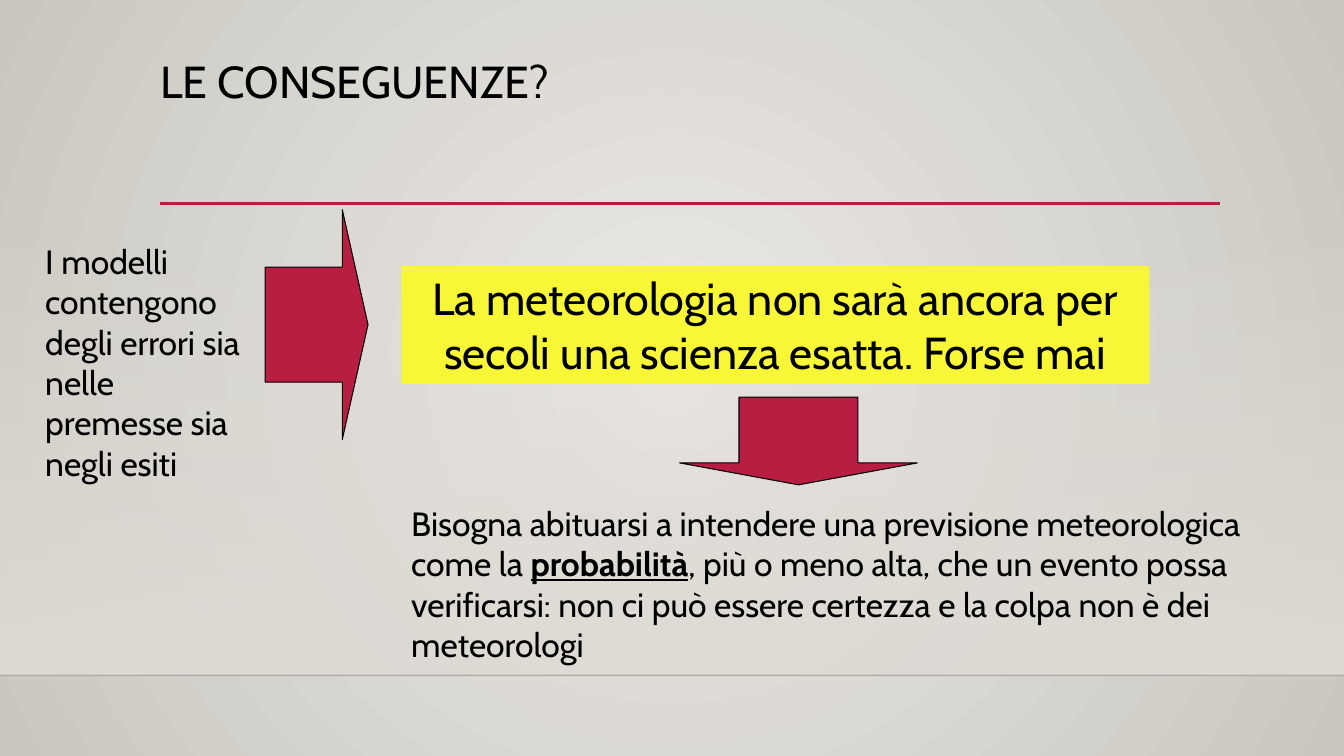
import pptx
import pptx.util
import pptx.dml.color
import pptx.enum.shapes
import pptx.enum.text
import pptx.oxml.ns
import lxml.etree

Inches = pptx.util.Inches
Pt = pptx.util.Pt
RGBColor = pptx.dml.color.RGBColor
Shape = pptx.enum.shapes.MSO_SHAPE
Align = pptx.enum.text.PP_ALIGN
qn = pptx.oxml.ns.qn

BLACK = RGBColor(0, 0, 0)
RED = RGBColor(0xB7, 0x1E, 0x42)
YELLOW = RGBColor(0xF7, 0xF7, 0x37)
SAND = RGBColor(0xDF, 0xDB, 0xD5)
LIGHT = RGBColor(0xEC, 0xEA, 0xE7)
DARK = RGBColor(0xCA, 0xC7, 0xC1)


def write(shape, *parts, size=24, align=Align.LEFT, spacing=None):
    frame = shape.text_frame
    frame.word_wrap = True
    frame.auto_size = pptx.enum.text.MSO_AUTO_SIZE.NONE
    frame.vertical_anchor = pptx.enum.text.MSO_ANCHOR.TOP
    para = frame.paragraphs[0]
    para.alignment = align
    para.line_spacing = spacing
    for num, text in enumerate(parts):
        run = para.add_run()
        run.text = text
        run.font.name = "Cabin"
        run.font.size = Pt(size)
        run.font.color.rgb = BLACK
        if num % 2:
            run.font.bold = True
            run.font.underline = True


def fade(shape, percent):
    color = next(shape.element.iter(qn("a:srgbClr")))
    lxml.etree.SubElement(color, qn("a:alpha"), val=str(percent * 1000))


deck = pptx.Presentation()
deck.slide_width = Inches(13.33)
deck.slide_height = Inches(7.5)
slide = deck.slides.add_slide(deck.slide_layouts[5])
shapes = slide.shapes

back = slide.background.fill
back.gradient()
for stop, color in zip(back.gradient_stops, (LIGHT, DARK)):
    stop.color.rgb = color
grad = next(slide.element.iter(qn("a:gradFill")))
grad.remove(grad.find(qn("a:lin")))
ring = lxml.etree.SubElement(grad, qn("a:path"), path="circle")
lxml.etree.SubElement(ring, qn("a:fillToRect"), l="50000", t="50000", r="50000", b="50000")

wall = shapes.add_shape(Shape.RECTANGLE, 0, Inches(2.21), Inches(13.33), Inches(4.49))
wall.shadow.inherit = False
wall.line.fill.background()
wall.fill.gradient()
wall.fill.gradient_angle = 270
for stop in wall.fill.gradient_stops:
    stop.color.rgb = SAND
fade(wall, 0)

for left, right, top, color, width, alpha in (
    (0, 13.33, 6.7, BLACK, 1, 20),
    (1.59, 12.1, 2.02, RED, 2.5, 100),
):
    rule = shapes.add_connector(
        pptx.enum.shapes.MSO_CONNECTOR.STRAIGHT,
        Inches(left), Inches(top), Inches(right), Inches(top),
    )
    rule.line.color.rgb = color
    rule.line.width = Pt(width)
    fade(rule, alpha)
    lxml.etree.SubElement(rule.element.spPr, qn("a:effectLst"))

title = shapes.title
title.left, title.top = Inches(1.49), Inches(0.54)
title.width, title.height = Inches(10.5), Inches(1.15)
write(title, "LE CONSEGUENZE?", size=32, spacing=0.9)

cause = shapes.add_textbox(Inches(0.35), Inches(2.34), Inches(2.28), Inches(2.12))
write(cause, "I modelli contengono degli errori sia nelle premesse sia negli esiti")

claim = shapes.add_textbox(Inches(3.98), Inches(2.64), Inches(7.42), Inches(1.17))
claim.fill.solid()
claim.fill.fore_color.rgb = YELLOW
write(
    claim,
    "La meteorologia non sarà ancora per secoli una scienza esatta. Forse mai",
    size=32, align=Align.CENTER,
)

advice = shapes.add_textbox(Inches(3.98), Inches(4.94), Inches(8.82), Inches(1.72))
write(
    advice,
    "Bisogna abituarsi a intendere una previsione meteorologica come la ",
    "probabilità",
    ", più o meno alta, che un evento possa verificarsi: "
    "non ci può essere certezza e la colpa non è dei meteorologi",
)

for left, top, width, height, turn in (
    (2, 2.71, 2.28, 1.02, 270),
    (6.74, 3.94, 2.36, 0.87, 0),
):
    arrow = shapes.add_shape(
        Shape.DOWN_ARROW, Inches(left), Inches(top), Inches(width), Inches(height)
    )
    arrow.rotation = turn
    arrow.adjustments[0] = 0.5
    arrow.adjustments[1] = 0.25
    arrow.shadow.inherit = False
    arrow.fill.solid()
    arrow.fill.fore_color.rgb = RED
    arrow.line.color.rgb = BLACK
    arrow.line.width = Pt(0.75)

deck.save("out.pptx")
